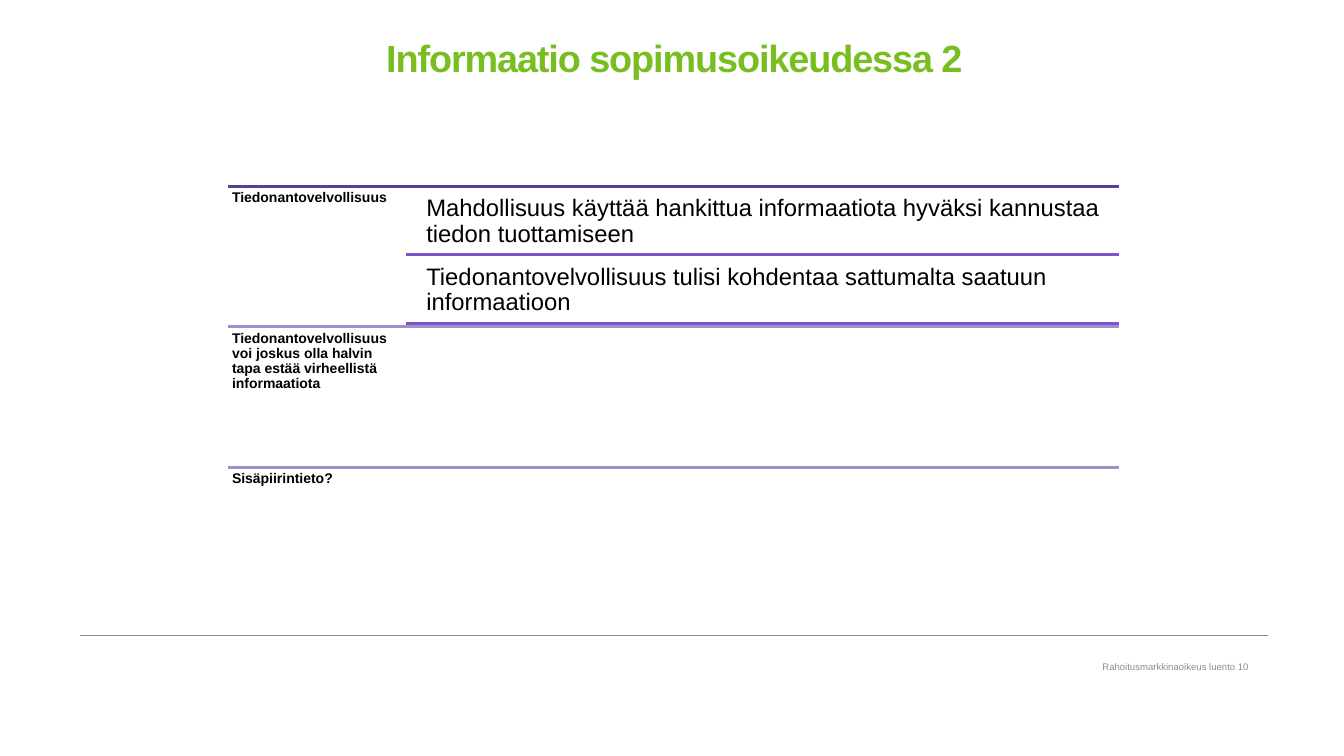
from lxml import etree
from pptx import Presentation
from pptx.dml.color import RGBColor
from pptx.enum import shapes, text
from pptx.oxml import ns
from pptx.util import Pt

GREEN = RGBColor(0x78, 0xBE, 0x20)
DARK = RGBColor(0x5C, 0x3F, 0x93)
MID = RGBColor(0x7D, 0x55, 0xC7)
LIGHT = RGBColor(0xA1, 0x8F, 0xCE)
GRAY = RGBColor(0x8C, 0x8C, 0x8C)
BLACK = RGBColor(0, 0, 0)

ROWS = [
    ("Tiedonantovelvollisuus", DARK, [
        "Mahdollisuus käyttää hankittua informaatiota hyväksi kannustaa tiedon tuottamiseen",
        "Tiedonantovelvollisuus tulisi kohdentaa sattumalta saatuun informaatioon",
    ]),
    ("Tiedonantovelvollisuus voi joskus olla halvin tapa estää virheellistä informaatiota",
     LIGHT, []),
    ("Sisäpiirintieto?", LIGHT, []),
]


def add_rule(slide, left, top, width, color, weight):
    line = slide.shapes.add_connector(
        shapes.MSO_CONNECTOR.STRAIGHT, Pt(left), Pt(top), Pt(left + width), Pt(top))
    line.line.color.rgb = color
    line.line.width = Pt(weight)
    etree.SubElement(line._element.spPr, ns.qn("a:effectLst"))


def write(shape, words, size, color, bold=False, align=text.PP_ALIGN.LEFT,
          pad=(0, 0, 0, 0), space=0.9, anchor=text.MSO_ANCHOR.TOP):
    """Put one formatted run in the shape; pad is left, top, right, bottom."""
    frame = shape.text_frame
    frame.word_wrap = True
    frame.auto_size = text.MSO_AUTO_SIZE.NONE
    frame.vertical_anchor = anchor
    frame.margin_left, frame.margin_top, frame.margin_right, frame.margin_bottom = map(Pt, pad)
    para = frame.paragraphs[0]
    para.alignment = align
    para.line_spacing = space
    run = para.add_run()
    run.text = words
    font = run.font
    font.name, font.size, font.bold = "Arial", Pt(size), bold
    font.color.rgb = color
    return run


def add_text(slide, box, *args, **style):
    return write(slide.shapes.add_textbox(*map(Pt, box)), *args, **style)


def add_title(slide, box):
    title = slide.shapes.title
    title.left, title.top, title.width, title.height = map(Pt, box)
    run = write(title, "Informaatio sopimusoikeudessa 2", 27, GREEN, bold=True,
                align=text.PP_ALIGN.CENTER, space=0.85)
    run.font._element.set("spc", "-80")


def add_rows(slide, box):
    """Stack ruled rows: a bold label at left, ruled points at right."""
    left, top, width, height = box
    step = height / len(ROWS)
    side = width / 5
    gap, inset, pitch = 2, 9.5, 49
    for i, (label, color, points) in enumerate(ROWS):
        y = top + i * step
        for j, point in enumerate(points):
            low = y + gap + j * pitch
            add_text(slide, (left + side + inset, low, width - side - inset, pitch - gap),
                     point, 17, BLACK, pad=(5, 5, 5, 5))
            add_rule(slide, left + side, low + pitch - gap, width - side, MID, 2)
        add_rule(slide, left, y, width, color, 2)
        add_text(slide, (left, y, side, step), label, 10, BLACK, bold=True, pad=(3, 3, 3, 3))


def add_footer(slide, box):
    left, top, width, height = box
    add_rule(slide, left, top, width, GRAY, 1)
    add_text(slide, (left + width - 387, top + 14.5, 380, 12),
             "Rahoitusmarkkinaoikeus luento 10", 6.8, GRAY,
             align=text.PP_ALIGN.RIGHT, pad=(7, 3.5, 7, 0), space=1,
             anchor=text.MSO_ANCHOR.MIDDLE)


def main():
    deck = Presentation()
    deck.slide_width, deck.slide_height = Pt(960), Pt(540)
    slide = deck.slides.add_slide(deck.slide_layouts.get_by_name("Title Only"))
    add_title(slide, (57, 30, 849, 94))
    add_rows(slide, (162.75, 133, 636.5, 301.5))
    add_footer(slide, (57, 454, 849, 40))
    deck.save("out.pptx")


if __name__ == "__main__":
    main()
